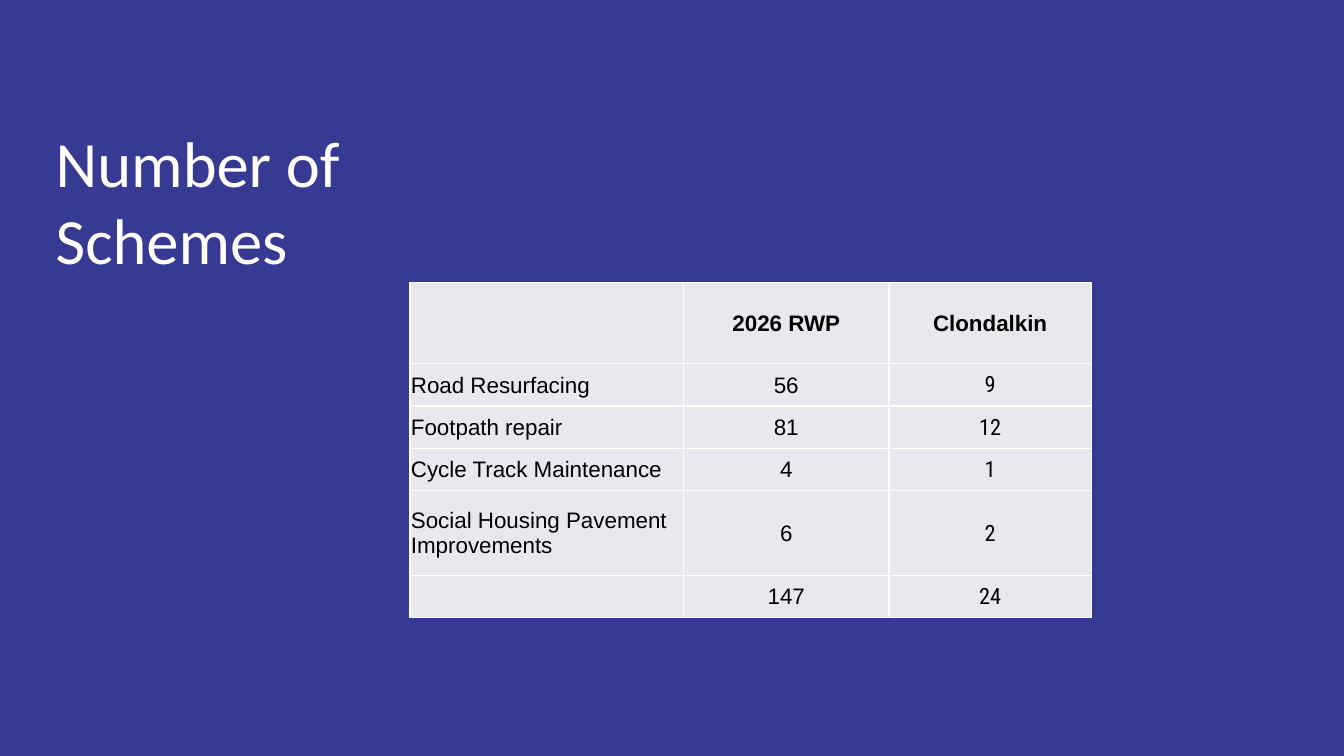
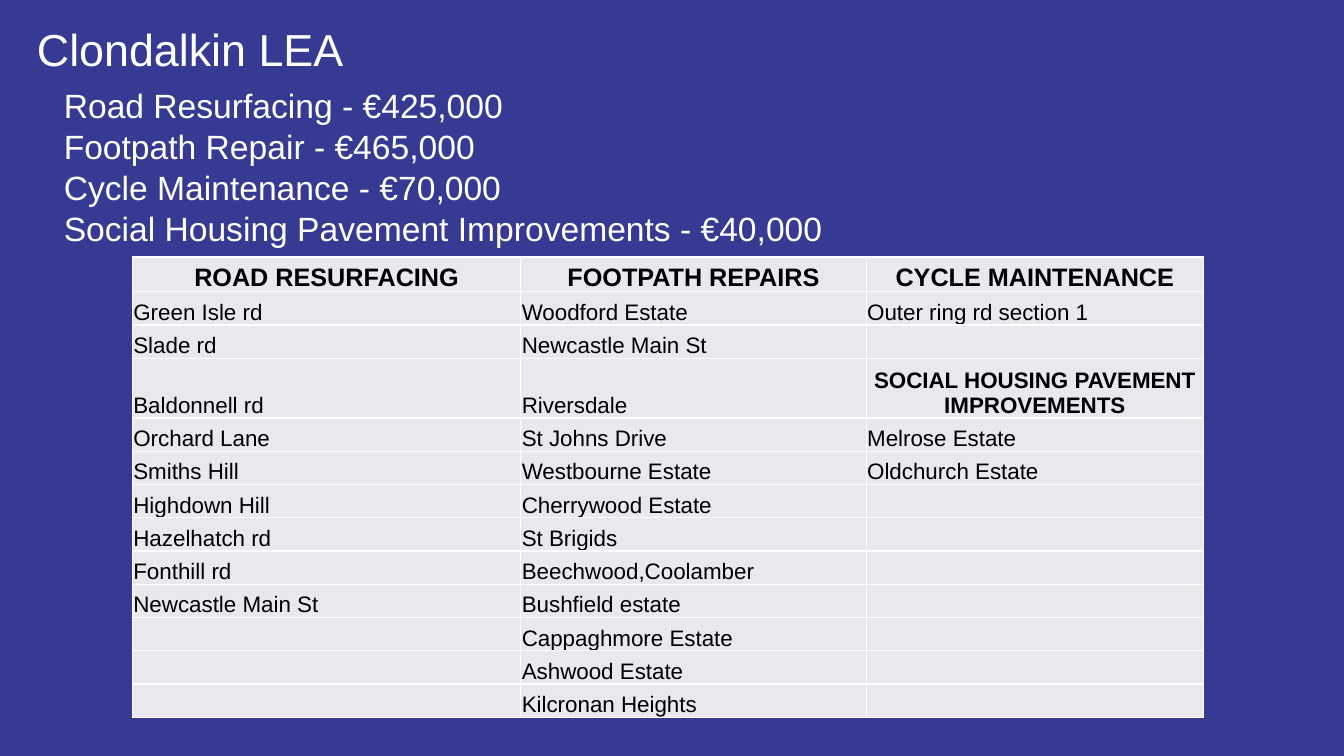
"""Build two slides on the road works programme: scheme numbers and the Clondalkin list."""
from itertools import product, zip_longest

from lxml.etree import SubElement
from pptx import Presentation
from pptx.dml.color import RGBColor
from pptx.enum.text import MSO_ANCHOR, PP_ALIGN
from pptx.oxml.ns import qn
from pptx.util import Inches, Pt

NAVY = RGBColor(0x36, 0x3A, 0x92)
WHITE = RGBColor(0xFF, 0xFF, 0xFF)
BLACK = RGBColor(0x00, 0x00, 0x00)
PALE = RGBColor(0xE8, 0xE8, 0xEE)
WIDTH, HEIGHT = Inches(13.33), Inches(7.5)
COLUMN, ROW = WIDTH / 100, HEIGHT / 100


def add_title(slide, left, top, width, height, lines, font_name, size, spacing):
    shape = slide.shapes.add_textbox(
        int(left * COLUMN), int(top * ROW), int(width * COLUMN), int(height * ROW))
    frame = shape.text_frame
    frame.word_wrap = True
    frame.margin_left = frame.margin_right = frame.margin_top = frame.margin_bottom = 0
    frame.text = "\n".join(lines)
    for paragraph in frame.paragraphs:
        paragraph.line_spacing = spacing
        font = paragraph.runs[0].font
        font.name, font.size, font.color.rgb = font_name, Pt(size), WHITE
    return frame.paragraphs


def add_grid(slide, left, top, widths, heights, rows, anchor, heading_size):
    table = slide.shapes.add_table(
        len(heights), len(widths), int(left * COLUMN), int(top * ROW),
        int(sum(widths) * COLUMN), int(sum(heights) * ROW)).table
    table.first_row = table.horz_banding = False
    for column, width in zip(table.columns, widths):
        column.width = int(width * COLUMN)
    for row, height in zip(table.rows, heights):
        row.height = int(height * ROW)
    for row, column in product(range(len(heights)), range(len(widths))):
        cell, text = table.cell(row, column), rows[row][column]
        cell.margin_left = cell.margin_right = cell.margin_top = Inches(0.01)
        cell.margin_bottom = 0
        cell.vertical_anchor = anchor
        for side in ("a:lnL", "a:lnR", "a:lnT", "a:lnB"):
            border = SubElement(cell._tc.get_or_add_tcPr(), qn(side), w=str(Pt(1)))
            fill = SubElement(border, qn("a:solidFill"))
            SubElement(fill, qn("a:srgbClr"), val=str(WHITE))
        cell.fill.solid()
        cell.fill.fore_color.rgb = PALE
        if not text:
            continue
        cell.text = text
        paragraph = cell.text_frame.paragraphs[0]
        heading = row == 0 or text.isupper()
        paragraph.alignment = PP_ALIGN.CENTER if heading or text.isdigit() else PP_ALIGN.LEFT
        font = paragraph.runs[0].font
        font.name, font.bold, font.color.rgb = "Arial", heading, BLACK
        font.size = Pt(heading_size if row == 0 else 16)
    return table


presentation = Presentation()
presentation.slide_width, presentation.slide_height = WIDTH, HEIGHT
background = presentation.slide_master.background.fill
background.solid()
background.fore_color.rgb = NAVY
blank = presentation.slide_layouts[6]

slide = presentation.slides.add_slide(blank)
add_title(slide, 4.15, 16.7, 32.6, 31.2, ["Number of Schemes"], "Calibri", 46.1, 0.99)
schemes = [
    ("", "2026 RWP", "Clondalkin"),
    ("Road Resurfacing", "56", "9"),
    ("Footpath repair", "81", "12"),
    ("Cycle Track Maintenance", "4", "1"),
    ("Social Housing Pavement Improvements", "6", "2"),
    ("", "147", "24"),
]
table = add_grid(slide, 30.5, 37.4, [20.35, 15.3, 15.05], [10.7, 5.6, 5.6, 5.6, 11.2, 5.6],
                 schemes, MSO_ANCHOR.MIDDLE, 16)
for row in range(1, len(schemes)):
    table.cell(row, 2).text_frame.paragraphs[0].runs[0].font.name = "Roboto Condensed"

slide = presentation.slides.add_slide(blank)
heading, *budgets = add_title(slide, 2.75, 2.75, 68, 28, [
    "Clondalkin LEA",
    "Road Resurfacing - €425,000",
    "Footpath Repair - €465,000",
    "Cycle Maintenance - €70,000",
    "Social Housing Pavement Improvements - €40,000",
], "Arial", 24, 1.02)
heading.runs[0].font.size = Pt(32)
budgets[0].space_before = Pt(6)
for paragraph in budgets:
    paragraph._p.get_or_add_pPr().set("marL", str(int(2 * COLUMN)))

roads = ["ROAD RESURFACING", "Green Isle rd", "Slade rd", "Baldonnell rd", "Orchard Lane",
         "Smiths Hill", "Highdown Hill", "Hazelhatch rd", "Fonthill rd", "Newcastle Main St"]
footpaths = ["FOOTPATH REPAIRS", "Woodford Estate", "Newcastle Main St", "Riversdale",
             "St Johns Drive", "Westbourne Estate", "Cherrywood Estate", "St Brigids",
             "Beechwood,Coolamber", "Bushfield estate", "Cappaghmore Estate",
             "Ashwood Estate", "Kilcronan Heights"]
cycle_and_housing = ["CYCLE MAINTENANCE", "Outer ring rd section 1", "",
                     "SOCIAL HOUSING PAVEMENT IMPROVEMENTS", "Melrose Estate", "Oldchurch Estate"]
locations = list(zip_longest(roads, footpaths, cycle_and_housing, fillvalue=""))
add_grid(slide, 9.85, 34, [28.9, 25.7, 25.1], [4.6, 4.4, 4.4, 7.9] + [4.4] * 9,
         locations, MSO_ANCHOR.BOTTOM, 18)

presentation.save("out.pptx")
